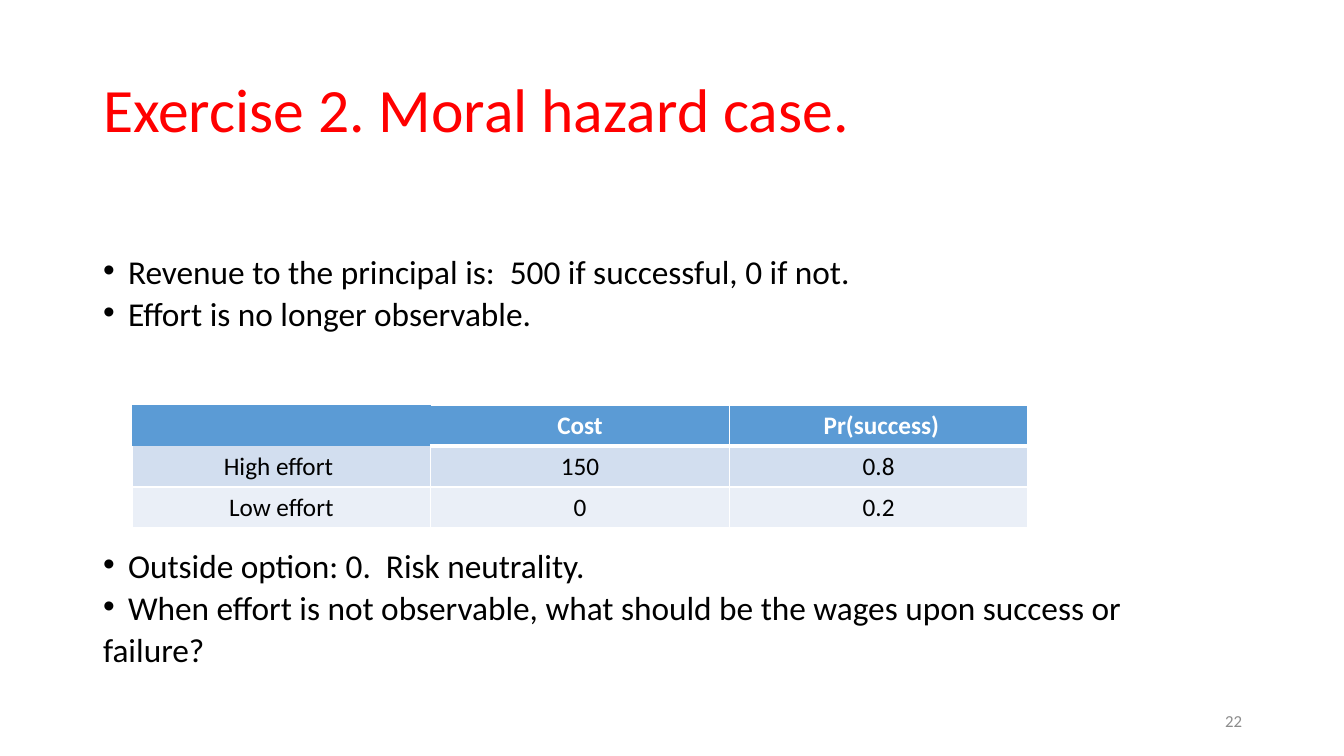
from lxml import etree
from pptx import Presentation
from pptx.dml.color import RGBColor
from pptx.enum.text import MSO_ANCHOR, MSO_AUTO_SIZE, PP_ALIGN
from pptx.oxml.ns import qn
from pptx.util import Pt

PX = 914400 / 100.8
FONT = "Calibri"
LEFT, CENTER, RIGHT = PP_ALIGN.LEFT, PP_ALIGN.CENTER, PP_ALIGN.RIGHT
MIDDLE, TOP = MSO_ANCHOR.MIDDLE, MSO_ANCHOR.TOP
NO_FIT = MSO_AUTO_SIZE.NONE
COLORS = {
    "title": "FF0000",
    "text": "000000",
    "white": "FFFFFF",
    "header": "5B9BD5",
    "band_dark": "D2DEEF",
    "band_light": "EAEFF7",
    "number": "8C8C8C",
}
BULLETS = [
    ("Revenue to the principal is:  500 if successful, 0 if not.", 0, True),
    ("Effort is no longer observable.", 10, True),
    ("Outside option: 0.  Risk neutrality.", 160, True),
    ("When effort is not observable, what should be the wages upon success or", 10, True),
    ("failure?", 10, False),
]
EFFORTS = [
    ["", "Cost", " Pr(success)"],
    ["High effort ", "150", "0.8"],
    ["Low effort", "0", "0.2"],
]


def emu(px):
    return round(px * PX)


def color(name):
    return RGBColor.from_string(COLORS[name])


def place(shape, left, top, width, height):
    shape.left, shape.top = emu(left), emu(top)
    shape.width, shape.height = emu(width), emu(height)


def write(para, text, size, ink="text", bold=False, align=LEFT, spacing=1.0, before=0):
    para.alignment = align
    para.line_spacing = spacing
    para.space_before = Pt(before)
    span = para.add_run()
    span.text = text
    span.font.name = FONT
    span.font.size = Pt(size)
    span.font.bold = bold
    span.font.color.rgb = color(ink)


def set_bullet(para, shown):
    props = para._p.get_or_add_pPr()
    indent = emu(25) if shown else 0
    props.set("marL", str(indent))
    props.set("indent", str(-indent))
    if shown:
        etree.SubElement(props, qn("a:buFont")).set("typeface", "Arial")
        etree.SubElement(props, qn("a:buChar")).set("char", "•")
    else:
        etree.SubElement(props, qn("a:buNone"))


def set_borders(cell, widths):
    props = cell._tc.get_or_add_tcPr()
    for side, width in zip("LRTB", widths):
        line = etree.SubElement(props, qn(f"a:ln{side}"))
        line.set("w", str(Pt(width)))
        if width:
            fill = etree.SubElement(line, qn("a:solidFill"))
            etree.SubElement(fill, qn("a:srgbClr")).set("val", COLORS["white"])
        else:
            etree.SubElement(line, qn("a:noFill"))


def border_widths(row, column):
    if row == 0:
        return (0, 0, 0, 0) if column == 0 else (int(column > 1), 1, 1, 3)
    top = 1 if row > 1 else 3 if column else 0
    return 1, 1, top, 1


def add_title(page, text):
    title = page.shapes.title
    place(title, 93, 40, 1159, 146)
    frame = title.text_frame
    frame.auto_size = NO_FIT
    frame.vertical_anchor = MIDDLE
    write(frame.paragraphs[0], text, 44, "title", spacing=0.9)


def add_bullets(page, items):
    body = page.placeholders[1]
    place(body, 93, 202, 1159, 480)
    frame = body.text_frame
    frame.auto_size = NO_FIT
    frame.vertical_anchor = TOP
    frame.margin_top = emu(60)
    for index, (text, before, bulleted) in enumerate(items):
        para = frame.add_paragraph() if index else frame.paragraphs[0]
        set_bullet(para, bulleted)
        write(para, text, 23.8, spacing=0.7, before=before)


def add_effort_table(page, rows):
    bounds = [emu(px) for px in (132, 405, 896, 123)]
    table = page.shapes.add_table(len(rows), len(rows[0]), *bounds).table
    fills = ["header", "band_dark", "band_light"]
    for row, texts in enumerate(rows):
        for column, text in enumerate(texts):
            cell = table.cell(row, column)
            set_borders(cell, border_widths(row, column))
            cell.fill.solid()
            cell.fill.fore_color.rgb = color(fills[row])
            if text:
                header = row == 0
                write(cell.text_frame.paragraphs[0], text, 18,
                      "white" if header else "text", bold=header, align=CENTER)


def add_page_number(page, text):
    box = page.shapes.add_textbox(*[emu(px) for px in (950, 701, 302, 40)])
    frame = box.text_frame
    frame.word_wrap = True
    frame.vertical_anchor = MIDDLE
    write(frame.paragraphs[0], text, 12, "number", align=RIGHT)


def main():
    deck = Presentation()
    deck.slide_width, deck.slide_height = emu(1344), emu(756)
    page = deck.slides.add_slide(deck.slide_layouts[1])
    add_title(page, "Exercise 2. Moral hazard case.")
    add_bullets(page, BULLETS)
    add_effort_table(page, EFFORTS)
    add_page_number(page, "22")
    deck.save("out.pptx")


if __name__ == "__main__":
    main()
